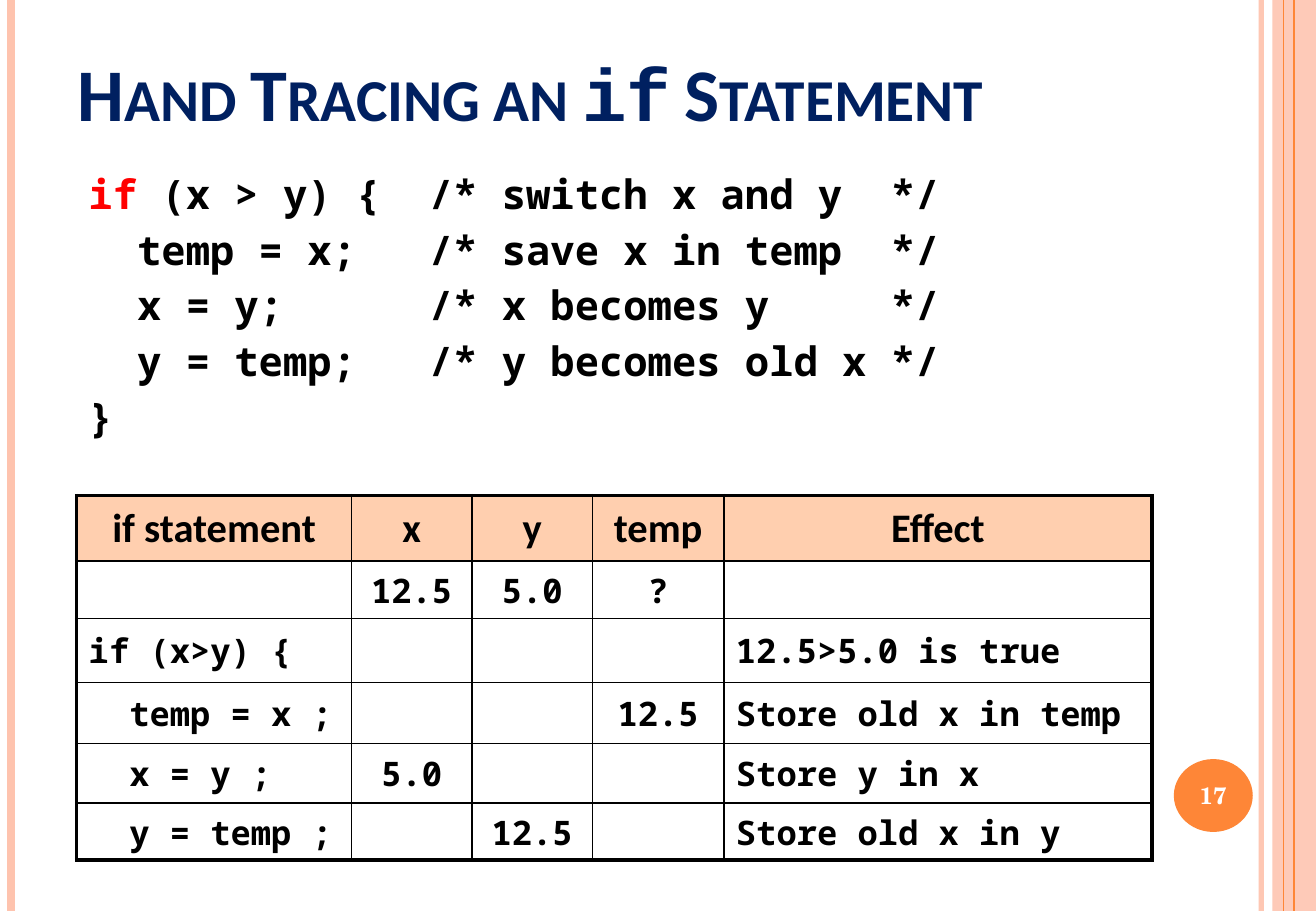
import pptx
import pptx.dml.color
import pptx.enum.shapes
import pptx.enum.text
import pptx.oxml
import pptx.oxml.ns
import pptx.util

RGBColor = pptx.dml.color.RGBColor
PEACH = RGBColor(0xFE, 0xC3, 0xAE)
ORANGE = RGBColor(0xFE, 0x86, 0x37)
HEADER = RGBColor(0xFF, 0xCF, 0xAF)
NAVY = RGBColor(0x00, 0x20, 0x60)
RED = RGBColor(0xFF, 0x00, 0x00)
BLACK = RGBColor(0x00, 0x00, 0x00)
WHITE = RGBColor(0xFF, 0xFF, 0xFF)

WIDTH = pptx.util.Inches(10.83)
HEIGHT = pptx.util.Inches(7.5)
HEADING_FONT = "Calibri"
CODE_FONT = "Noto Sans Mono"

TITLE_BOX = (4.99, 2.93, 81.72, 12.67)
CODE_BOX = (5.82, 17.07, 69.16, 34.4)
TABLE_BOX = (5.82, 54.4, 81.72, 40)
BADGE_BOX = (89.2, 83.33, 6, 8)
BAND_BOX = (96.68, 0, 3.32, 100)
RULES = [(95.84, PEACH, 3, 93), (0.83, PEACH, 4.5, 100),
         (98.34, ORANGE, 1.5, 100), (97.51, ORANGE, 0.75, 100)]

CODE = [
    " (x > y) {  /* switch x and y  */",
    "  temp = x;   /* save x in temp  */",
    "  x = y;      /* x becomes y     */",
    "  y = temp;   /* y becomes old x */",
    "}",
]
COLUMN_SHARES = [25.57, 11.2, 11.2, 12.22, 39.81]
ROW_SHARES = [18, 15.67, 17.67, 16.67, 16.33, 15.66]
TRACE = [
    ["if statement", "x", "y", "temp", "Effect"],
    ["", "12.5", "5.0", "?", ""],
    ["if (x>y) {", "", "", "", "12.5>5.0 is true"],
    ["  temp = x ;", "", "", "12.5", "Store old x in temp"],
    ["  x = y ;", "5.0", "", "", "Store y in x"],
    ["  y = temp ;", "", "12.5", "", "Store old x in y"],
]


def place(box):
    """Turn percentages of the slide into left, top, width and height."""
    return [int(share * side / 100) for share, side in zip(box, (WIDTH, HEIGHT) * 2)]


def set_font(font, name, size, color):
    """Apply a bold typeface, size and colour."""
    font.name, font.size, font.bold = name, pptx.util.Pt(size), True
    font.color.rgb = color


def set_opacity(shape, percent):
    """Make the first colour of a shape partly transparent."""
    color = shape._element.spPr.find(".//" + pptx.oxml.ns.qn("a:srgbClr"))
    alpha = color.makeelement(pptx.oxml.ns.qn("a:alpha"), {"val": str(percent * 1000)})
    color.append(alpha)


def add_preset(slide, preset, box, color):
    """Add a flat filled shape without an outline."""
    shape = slide.shapes.add_shape(preset, *place(box))
    shape.shadow.inherit = False
    shape.fill.solid()
    shape.fill.fore_color.rgb = color
    shape.line.fill.background()
    return shape


def add_margins(slide):
    """Draw the vertical rules and the band along the slide edges."""
    band = add_preset(slide, pptx.enum.shapes.MSO_SHAPE.RECTANGLE, BAND_BOX, PEACH)
    set_opacity(band, 87)
    for share, color, weight, opacity in RULES:
        left, top, _, height = place((share, 0, 0, 100))
        rule = slide.shapes.add_connector(
            pptx.enum.shapes.MSO_CONNECTOR.STRAIGHT, left, top, left, height)
        rule.line.color.rgb = color
        rule.line.width = pptx.util.Pt(weight)
        if opacity < 100:
            set_opacity(rule, opacity)
        properties = rule._element.spPr
        properties.append(properties.makeelement(pptx.oxml.ns.qn("a:effectLst"), {}))


def add_page_number(slide, box):
    """Add the round page number badge."""
    badge = add_preset(slide, pptx.enum.shapes.MSO_SHAPE.OVAL, box, ORANGE)
    frame = badge.text_frame
    frame.margin_left = frame.margin_right = 0
    frame.vertical_anchor = pptx.enum.text.MSO_ANCHOR.MIDDLE
    paragraph = frame.paragraphs[0]
    paragraph.text = "17"
    paragraph.alignment = pptx.enum.text.PP_ALIGN.CENTER
    set_font(paragraph.font, "TeX Gyre Schola", 14, WHITE)


def add_title(slide, box):
    """Fill the title placeholder with small caps around the keyword."""
    title = slide.shapes.title
    title.left, title.top, title.width, title.height = place(box)
    frame = title.text_frame
    frame.auto_size = pptx.enum.text.MSO_AUTO_SIZE.NONE
    frame.vertical_anchor = pptx.enum.text.MSO_ANCHOR.BOTTOM
    paragraph = frame.paragraphs[0]
    paragraph.alignment = pptx.enum.text.PP_ALIGN.LEFT
    for text, name, caps in [("Hand Tracing an ", HEADING_FONT, "small"),
                             ("if", "Courier New", "none"),
                             (" Statement", HEADING_FONT, "small")]:
        run = paragraph.add_run()
        run.text = text
        set_font(run.font, name, 44, NAVY)
        run.font._element.set("cap", caps)


def add_code(slide, box):
    """Add the code listing with its first keyword in red."""
    frame = slide.shapes.add_textbox(*place(box)).text_frame
    frame.word_wrap = True
    for index, line in enumerate(CODE):
        paragraph = frame.add_paragraph() if index else frame.paragraphs[0]
        paragraph.line_spacing = 1.15
        set_font(paragraph.font, CODE_FONT, 24, BLACK)
        if index == 0:
            keyword = paragraph.add_run()
            keyword.text = "if"
            keyword.font.color.rgb = RED
        paragraph.add_run().text = line


def set_borders(cell, weights):
    """Draw black cell borders from weights keyed by side."""
    for side, weight in weights.items():
        cell._tc.get_or_add_tcPr().append(pptx.oxml.parse_xml(
            f'<a:ln{side} {pptx.oxml.ns.nsdecls("a")} w="{int(weight * 12700)}">'
            f'<a:solidFill><a:srgbClr val="{BLACK}"/></a:solidFill></a:ln{side}>'))


def add_trace_table(slide, box):
    """Add the table that traces the variables step by step."""
    left, top, width, height = place(box)
    last_row, last_column = len(TRACE) - 1, len(TRACE[0]) - 1
    table = slide.shapes.add_table(
        last_row + 1, last_column + 1, left, top, width, height).table
    table.horz_banding = table.first_row = False
    for column, share in zip(table.columns, COLUMN_SHARES):
        column.width = int(width * share / 100)
    for row, share in zip(table.rows, ROW_SHARES):
        row.height = int(height * share / 100)
    for i, texts in enumerate(TRACE):
        for j, text in enumerate(texts):
            cell = table.cell(i, j)
            edges = {"L": j == 0, "R": j == last_column, "T": i == 0, "B": i == last_row}
            set_borders(cell, {side: 2.25 if outer else 1 for side, outer in edges.items()})
            cell.fill.background()
            if i == 0:
                cell.fill.solid()
                cell.fill.fore_color.rgb = HEADER
            cell.vertical_anchor = pptx.enum.text.MSO_ANCHOR.MIDDLE
            paragraph = cell.text_frame.paragraphs[0]
            paragraph.text = text
            if i == 0 or 0 < j < last_column:
                paragraph.alignment = pptx.enum.text.PP_ALIGN.CENTER
            name, size = (CODE_FONT, 20) if i else (HEADING_FONT, 24)
            set_font(paragraph.font, name, size, BLACK)


def main():
    """Build and save the presentation."""
    presentation = pptx.Presentation()
    presentation.slide_width, presentation.slide_height = WIDTH, HEIGHT
    slide = presentation.slides.add_slide(presentation.slide_layouts[5])
    add_margins(slide)
    add_page_number(slide, BADGE_BOX)
    add_title(slide, TITLE_BOX)
    add_code(slide, CODE_BOX)
    add_trace_table(slide, TABLE_BOX)
    presentation.save("out.pptx")


if __name__ == "__main__":
    main()
